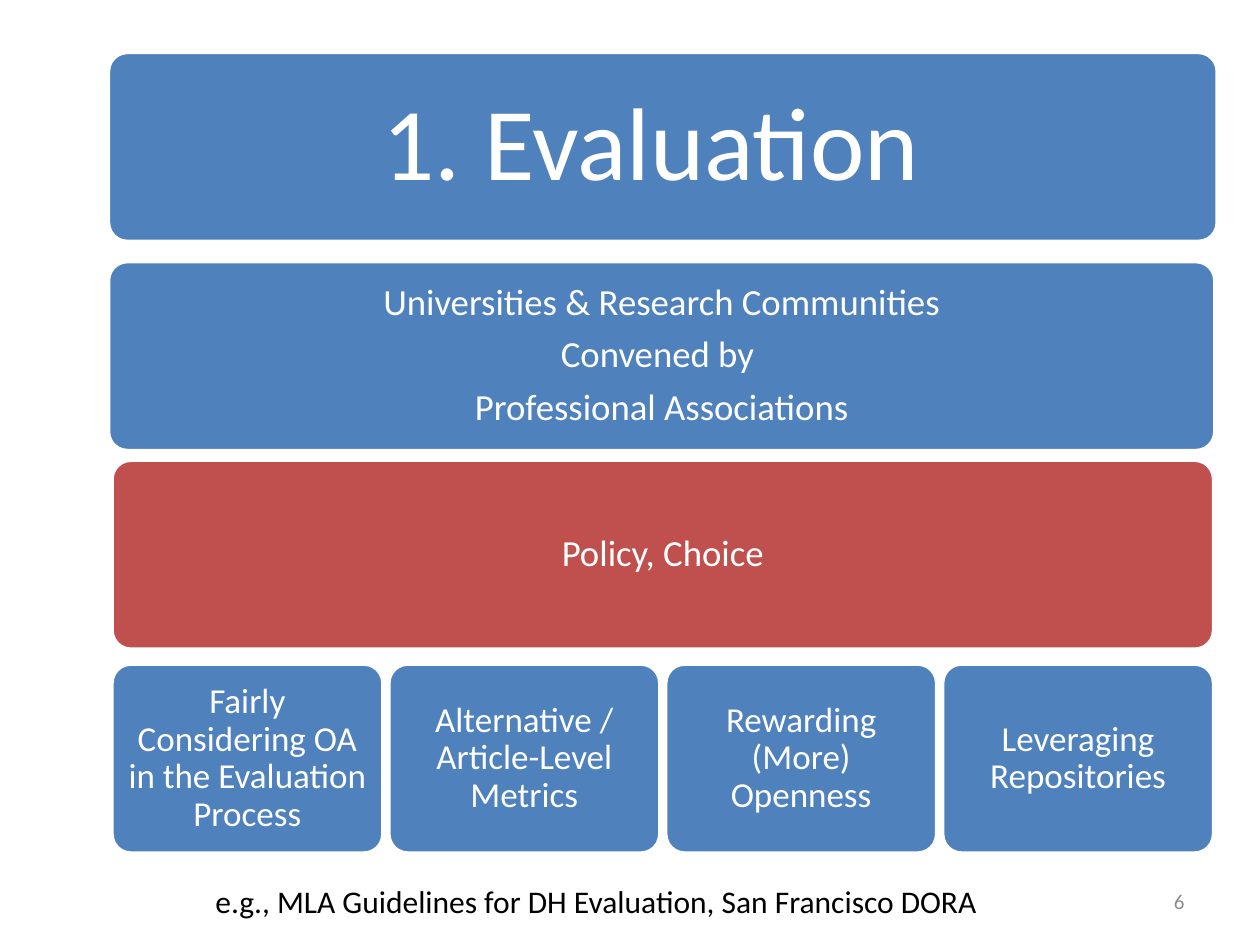
import pptx
import pptx.util
import pptx.dml.color
import pptx.enum.shapes
import pptx.enum.text

Pt = pptx.util.Pt
ALIGN = pptx.enum.text.PP_ALIGN
ANCHOR = pptx.enum.text.MSO_ANCHOR
COLORS = {
    "blue": "4F81BD",
    "red": "C0504D",
    "white": "FFFFFF",
    "gray": "8C8C8C",
    "black": "000000",
}
TILE_GAP = 3.4


def color(name):
    return pptx.dml.color.RGBColor.from_string(COLORS[name])


def set_attributes(target, values):
    for name, value in values.items():
        setattr(target, name, value)


def write_lines(shape, lines, size, color_name, alignment, frame_format):
    frame = shape.text_frame
    set_attributes(frame, {"word_wrap": True, **frame_format})
    for index, line in enumerate(lines):
        paragraph = frame.paragraphs[0] if index == 0 else frame.add_paragraph()
        paragraph.alignment = alignment
        run = paragraph.add_run()
        run.text = line
        set_attributes(run.font, {"name": "Calibri", "size": Pt(size)})
        run.font.color.rgb = color(color_name)


def add_block(slide, box, lines, size, inset, fill="blue"):
    shape = slide.shapes.add_shape(
        pptx.enum.shapes.MSO_SHAPE.ROUNDED_RECTANGLE, *map(Pt, box)
    )
    shape.adjustments[0] = 0.1
    shape.shadow.inherit = False
    shape.fill.solid()
    shape.fill.fore_color.rgb = color(fill)
    shape.line.color.rgb = color("white")
    shape.line.width = Pt(2)
    sides = ("left", "top", "right", "bottom")
    frame_format = {f"margin_{side}": Pt(inset) for side in sides}
    frame_format["vertical_anchor"] = ANCHOR.MIDDLE
    write_lines(shape, lines, size, "white", ALIGN.CENTER, frame_format)
    for index, paragraph in enumerate(shape.text_frame.paragraphs):
        spacing = Pt(0.35 * size) if index else Pt(0)
        set_attributes(paragraph, {"line_spacing": 0.9, "space_before": spacing})


def add_tile_row(slide, box, labels):
    left, top, width, height = box
    tile_width = (width - TILE_GAP * (len(labels) - 1)) / len(labels)
    for index, label in enumerate(labels):
        tile_left = left + index * (tile_width + TILE_GAP)
        add_block(slide, (tile_left, top, tile_width, height), [label], 20, 6)


def add_label(slide, box, text, size, color_name, alignment, anchor):
    label = slide.shapes.add_textbox(*map(Pt, box))
    write_lines(label, [text], size, color_name, alignment, {"vertical_anchor": anchor})


def build_slide(presentation):
    slide = presentation.slides.add_slide(presentation.slide_layouts[6])
    add_block(slide, (62, 30, 633.6, 108), ["1. Evaluation "], 59, 18)
    audience = [
        "Universities & Research Communities",
        "Convened by ",
        "Professional Associations",
    ]
    add_block(slide, (62, 149.5, 632.2, 108), audience, 21, 6.3)
    add_block(slide, (64, 263, 629.5, 108), ["Policy, Choice"], 21, 6.3, "red")
    topics = [
        "Fairly Considering OA in the Evaluation Process",
        "Alternative / Article-Level Metrics",
        "Rewarding (More) Openness",
        "Leveraging Repositories",
    ]
    add_tile_row(slide, (64, 379.5, 629.5, 108), topics)
    add_label(slide, (516, 500.5, 168, 28.8), "6", 12, "gray", ALIGN.RIGHT, ANCHOR.MIDDLE)
    example = "e.g., MLA Guidelines for DH Evaluation, San Francisco DORA"
    add_label(slide, (116, 500.5, 506, 28.8), example, 18, "black", ALIGN.LEFT, ANCHOR.TOP)


def main():
    presentation = pptx.Presentation()
    set_attributes(presentation, {"slide_width": Pt(720), "slide_height": Pt(540)})
    build_slide(presentation)
    presentation.save("out.pptx")


if __name__ == "__main__":
    main()
